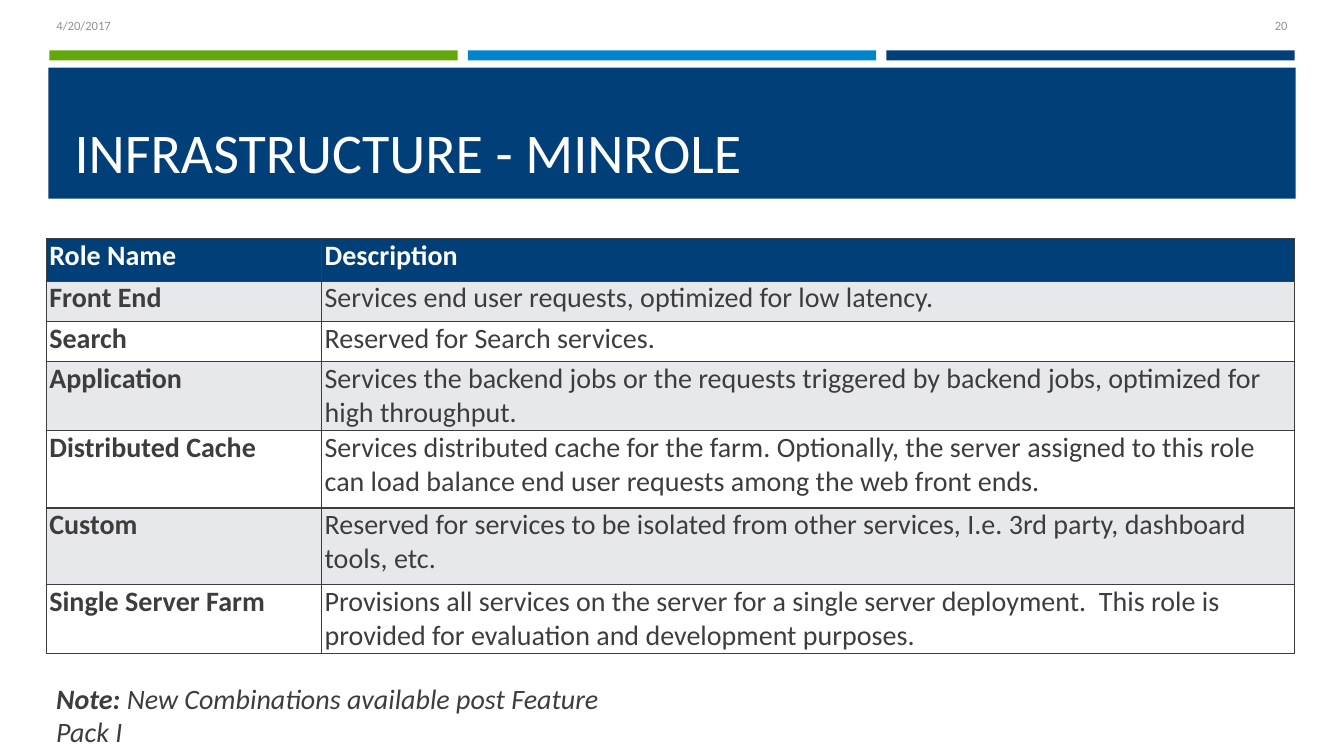
from dataclasses import dataclass

from lxml import etree
from pptx import Presentation
from pptx import util as u
from pptx.dml.color import RGBColor
from pptx.enum import shapes, text
from pptx.oxml import ns


@dataclass(frozen=True)
class Theme:
    navy: str = "003F77"
    blue: str = "0085CA"
    green: str = "63A70A"
    ink: str = "3D3D3D"
    muted: str = "929292"
    stripe: str = "E7E8EC"
    white: str = "FFFFFF"
    font: str = "Calibri"
    title_size: int = 40
    body_size: int = 20
    small_size: int = 9


THEME = Theme()
WIDTH, HEIGHT = 13.33, 7.5

# Page grid: three columns between the margins
LEFT, RIGHT, GUTTER = 0.49, 12.84, 0.1
COLUMN = (RIGHT - LEFT - 2 * GUTTER) / 3

ROLE_COLUMNS = [2.73, 9.65]
ROLE_ROWS = [0.42, 0.4, 0.4, 0.68, 0.77, 0.76, 0.68]
ROLES = [
    ("Role Name", "Description"),
    ("Front End", "Services end user requests, optimized for low latency."),
    ("Search", "Reserved for Search services."),
    ("Application", "Services the backend jobs or the requests triggered by "
     "backend jobs, optimized for high throughput."),
    ("Distributed Cache", "Services distributed cache for the farm. Optionally, "
     "the server assigned to this role can load balance end user requests "
     "among the web front ends."),
    ("Custom", "Reserved for services to be isolated from other services, "
     "I.e. 3rd party, dashboard tools, etc."),
    ("Single Server Farm", "Provisions all services on the server for a single "
     "server deployment.  This role is provided for evaluation and "
     "development purposes."),
]


def inches(*lengths):
    return [u.Inches(round(length, 2)) for length in lengths]


def style(font, size, color, bold=False, italic=False):
    font.name, font.size = THEME.font, u.Pt(size)
    font.color.rgb = RGBColor.from_string(color)
    font.bold, font.italic = bold, italic


def paint(fill, color):
    fill.solid()
    fill.fore_color.rgb = RGBColor.from_string(color)


def add_bar(slide, box, color):
    bar = slide.shapes.add_shape(shapes.MSO_SHAPE.RECTANGLE, *inches(*box))
    paint(bar.fill, color)
    bar.line.fill.background()
    bar.shadow.inherit = False


def add_label(slide, box, wording, align):
    frame = slide.shapes.add_textbox(*inches(*box)).text_frame
    frame.word_wrap = True
    frame.vertical_anchor = text.MSO_ANCHOR.MIDDLE
    frame.margin_left = frame.margin_right = u.Inches(0.07)
    frame.text = wording
    frame.paragraphs[0].alignment = align
    style(frame.paragraphs[0].runs[0].font, THEME.small_size, THEME.muted)


def place_title(slide, box, wording):
    title = slide.shapes.title
    title.left, title.top, title.width, title.height = inches(*box)
    frame = title.text_frame
    frame.text = wording
    frame.word_wrap = True
    frame.auto_size = text.MSO_AUTO_SIZE.NONE
    frame.vertical_anchor = text.MSO_ANCHOR.BOTTOM
    frame.paragraphs[0].alignment = text.PP_ALIGN.LEFT
    style(frame.paragraphs[0].runs[0].font, THEME.title_size, THEME.white)
    # Bring the title in front of its banner
    slide.shapes._spTree.append(title._element)


def add_borders(cell):
    properties = cell._tc.get_or_add_tcPr()
    for position, side in enumerate(("lnL", "lnR", "lnT", "lnB")):
        edge = etree.Element(ns.qn(f"a:{side}"), w=str(u.Pt(1)))
        solid = etree.SubElement(edge, ns.qn("a:solidFill"))
        etree.SubElement(solid, ns.qn("a:srgbClr"), val=THEME.ink)
        properties.insert(position, edge)


def fill_cell(cell, wording, background, color, bold):
    cell.text = wording
    cell.margin_left = cell.margin_right = u.Inches(0.03)
    cell.margin_top = cell.margin_bottom = 0
    style(cell.text_frame.paragraphs[0].runs[0].font,
          THEME.body_size, color, bold)
    paint(cell.fill, background)
    add_borders(cell)


def add_roles(slide, left, top):
    box = inches(left, top, sum(ROLE_COLUMNS), sum(ROLE_ROWS))
    roles = slide.shapes.add_table(len(ROLES), len(ROLE_COLUMNS), *box).table
    roles.horz_banding = False
    for column, width in zip(roles.columns, ROLE_COLUMNS):
        column.width = u.Inches(width)
    for row, height in zip(roles.rows, ROLE_ROWS):
        row.height = u.Inches(height)
    for r, entry in enumerate(ROLES):
        header = r == 0
        background = THEME.navy if header else (THEME.white, THEME.stripe)[r % 2]
        color = THEME.white if header else THEME.ink
        for c, wording in enumerate(entry):
            fill_cell(roles.cell(r, c), wording, background, color,
                      bold=header or c == 0)


def add_note(slide, box, lead, remark):
    frame = slide.shapes.add_textbox(*inches(*box)).text_frame
    frame.word_wrap = True
    for wording, bold in ((lead, True), (remark, False)):
        run = frame.paragraphs[0].add_run()
        run.text = wording
        style(run.font, THEME.body_size, THEME.ink, bold, italic=True)


def main():
    deck = Presentation()
    deck.slide_width, deck.slide_height = inches(WIDTH, HEIGHT)
    slide = deck.slides.add_slide(deck.slide_layouts[5])

    # Coloured strips and banner
    for index, color in enumerate((THEME.green, THEME.blue, THEME.navy)):
        add_bar(slide, (LEFT + index * (COLUMN + GUTTER), 0.5, COLUMN, 0.1), color)
    add_bar(slide, (0.48, 0.67, 12.37, 1.3), THEME.navy)

    # Date, title and page number
    add_label(slide, (LEFT, 0.05, 3, 0.4), "4/20/2017", text.PP_ALIGN.LEFT)
    place_title(slide, (0.64, 0.77, 12.06, 1.11), "INFRASTRUCTURE - MINROLE")
    add_label(slide, (RIGHT - 0.71, 0.05, 0.71, 0.4), "20", text.PP_ALIGN.RIGHT)

    # Role table and note
    add_roles(slide, 0.46, 2.37)
    add_note(slide, (0.46, 6.71, 6.04, 0.44), "Note:",
             " New Combinations available post Feature Pack I")

    deck.save("out.pptx")


if __name__ == "__main__":
    main()
